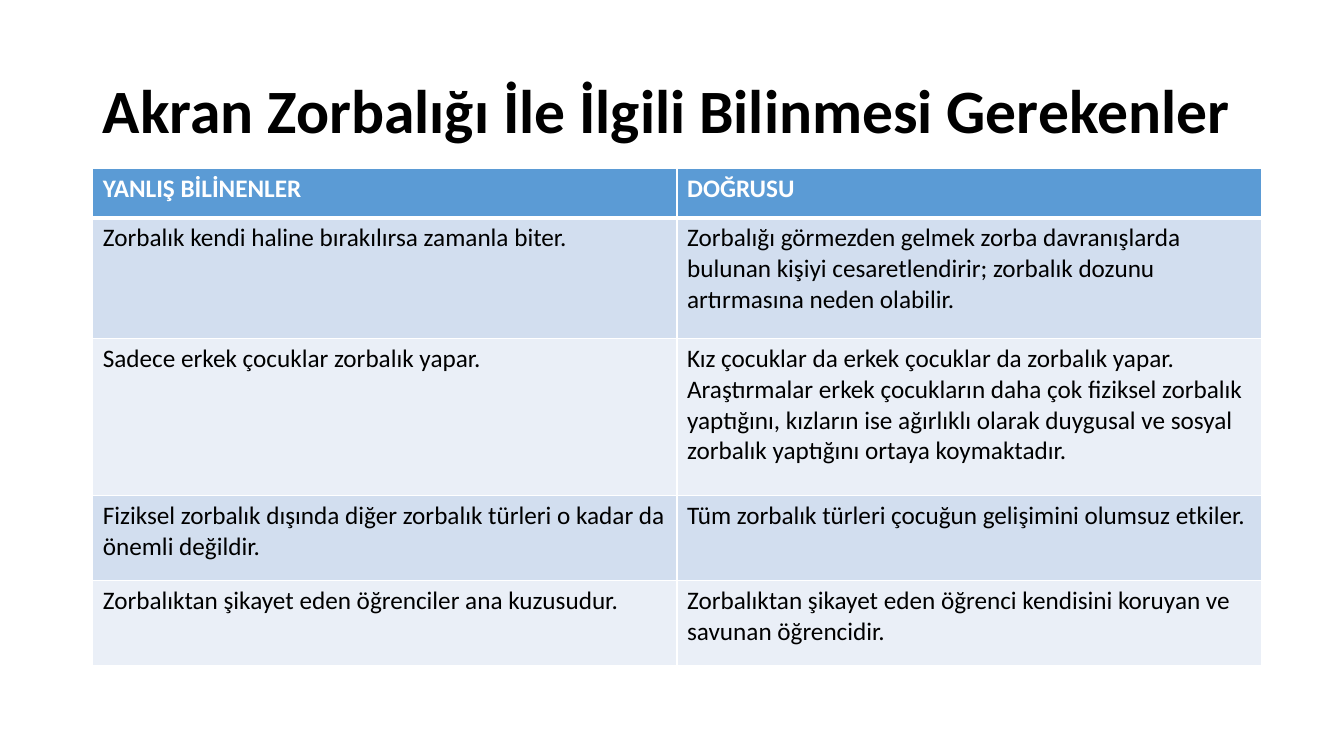
"""Build a slide that sets common beliefs about peer bullying against the facts."""
import dataclasses

import lxml.etree
import pptx
import pptx.dml.color
import pptx.enum.text
import pptx.oxml.ns
import pptx.util

Inches = pptx.util.Inches
Pt = pptx.util.Pt

TITLE = "Akran Zorbalığı İle İlgili Bilinmesi Gerekenler"
ROWS = [
    (0.49, "YANLIŞ BİLİNENLER", "DOĞRUSU"),
    (1.2, "Zorbalık kendi haline bırakılırsa zamanla biter.",
     "Zorbalığı görmezden gelmek zorba davranışlarda bulunan kişiyi "
     "cesaretlendirir; zorbalık dozunu artırmasına neden olabilir."),
    (1.56, "Sadece erkek çocuklar zorbalık yapar.",
     "Kız çocuklar da erkek çocuklar da zorbalık yapar. Araştırmalar erkek "
     "çocukların daha çok fiziksel zorbalık yaptığını, kızların ise ağırlıklı "
     "olarak duygusal ve sosyal zorbalık yaptığını ortaya koymaktadır."),
    (0.84, "Fiziksel zorbalık dışında diğer zorbalık türleri o kadar da önemli değildir.",
     "Tüm zorbalık türleri çocuğun gelişimini olumsuz etkiler."),
    (0.84, "Zorbalıktan şikayet eden öğrenciler ana kuzusudur.",
     "Zorbalıktan şikayet eden öğrenci kendisini koruyan ve savunan öğrencidir."),
]


@dataclasses.dataclass(frozen=True)
class Theme:
    font: str = "Calibri"
    title_size: int = 44
    table_size: int = 18
    text: str = "000000"
    header_text: str = "FFFFFF"
    header_fill: str = "5B9BD5"
    bands: tuple = ("D2DEEF", "EAEFF7")
    border: str = "FFFFFF"
    border_width: float = 1
    header_rule: float = 3


def rgb(value):
    return pptx.dml.color.RGBColor.from_string(value)


def write(tf, text, *, font, size, color, bold=False, spacing=1.0):
    p = tf.paragraphs[0]
    p.alignment = pptx.enum.text.PP_ALIGN.LEFT
    p.line_spacing = spacing
    r = p.add_run()
    r.text = text
    r.font.name = font
    r.font.size = Pt(size)
    r.font.bold = bold
    r.font.color.rgb = rgb(color)


def set_borders(cell, color, widths):
    qn = pptx.oxml.ns.qn
    props = cell._tc.get_or_add_tcPr()
    for i, (side, width) in enumerate(widths.items()):
        line = lxml.etree.Element(qn(f"a:ln{side}"), w=str(Pt(width)))
        fill = lxml.etree.SubElement(line, qn("a:solidFill"))
        lxml.etree.SubElement(fill, qn("a:srgbClr"), val=color)
        props.insert(i, line)


class SlideBuilder:
    def __init__(self, prs, theme):
        self.theme = theme
        self.slide = prs.slides.add_slide(prs.slide_layouts[5])

    def title(self, text, left, top, width, height):
        sp = self.slide.shapes.title
        sp.left, sp.top = Inches(left), Inches(top)
        sp.width, sp.height = Inches(width), Inches(height)
        tf = sp.text_frame
        tf.word_wrap = True
        tf.auto_size = pptx.enum.text.MSO_AUTO_SIZE.NONE
        tf.vertical_anchor = pptx.enum.text.MSO_ANCHOR.MIDDLE
        write(tf, text, font=self.theme.font, size=self.theme.title_size,
              color=self.theme.text, bold=True, spacing=0.9)

    def table(self, rows, left, top, width):
        columns = len(rows[0]) - 1
        height = sum(row[0] for row in rows)
        table = self.slide.shapes.add_table(
            len(rows), columns, Inches(left), Inches(top),
            Inches(width), Inches(height)).table
        for i, (row_height, *texts) in enumerate(rows):
            table.rows[i].height = Inches(row_height)
            for j, text in enumerate(texts):
                self.cell(table.cell(i, j), text, i)

    def cell(self, cell, text, row):
        t = self.theme
        header = row == 0
        cell.fill.solid()
        cell.fill.fore_color.rgb = rgb(
            t.header_fill if header else t.bands[(row - 1) % len(t.bands)])
        widths = dict.fromkeys("LRTB", t.border_width)
        if header:
            widths["B"] = t.header_rule
        elif row == 1:
            widths["T"] = t.header_rule
        set_borders(cell, t.border, widths)
        write(cell.text_frame, text, font=t.font, size=t.table_size,
              color=t.header_text if header else t.text, bold=header)


def main():
    prs = pptx.Presentation()
    prs.slide_width, prs.slide_height = Inches(13.33), Inches(7.5)
    builder = SlideBuilder(prs, Theme())
    builder.title(TITLE, 0.92, 0.4, 11.5, 1.45)
    builder.table(ROWS, 0.92, 1.67, 11.59)
    prs.save("out.pptx")


if __name__ == "__main__":
    main()
